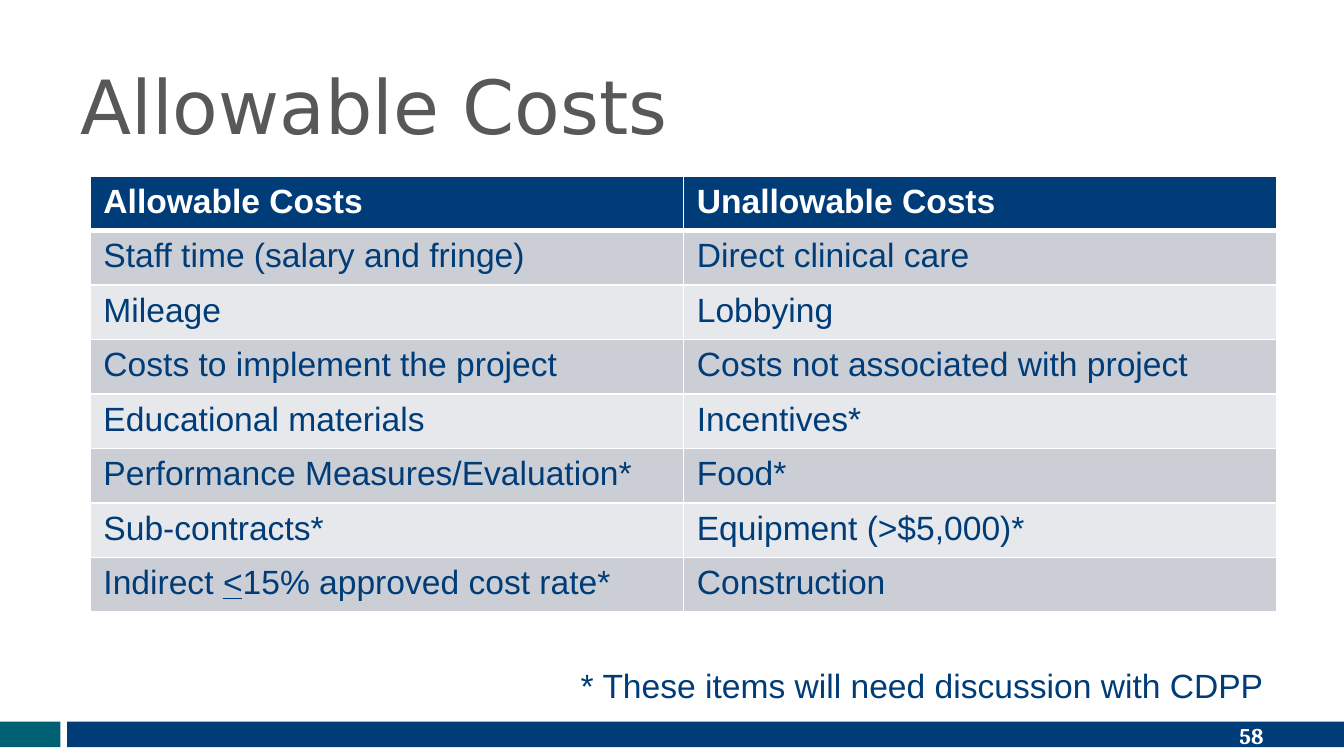
from lxml import etree
from pptx import Presentation
from pptx.dml.color import RGBColor
from pptx.enum.shapes import MSO_SHAPE
from pptx.enum.text import MSO_ANCHOR as ANCHOR, PP_ALIGN as ALIGN
from pptx.oxml.ns import qn
from pptx.util import Inches, Pt

NAVY = RGBColor(0x00, 0x3D, 0x78)
TEAL = RGBColor(0x00, 0x60, 0x73)
GREY = RGBColor(0x58, 0x58, 0x58)
WHITE = RGBColor(0xFF, 0xFF, 0xFF)
BANDS = (RGBColor(0xCC, 0xCE, 0xD6), RGBColor(0xE7, 0xE8, 0xEC))

HEADER = ("Allowable Costs", "Unallowable Costs")
COSTS = (
    ("Staff time (salary and fringe)", "Direct clinical care"),
    ("Mileage", "Lobbying"),
    ("Costs to implement the project", "Costs not associated with project"),
    ("Educational materials", "Incentives*"),
    ("Performance Measures/Evaluation*", "Food*"),
    ("Sub-contracts*", "Equipment (>$5,000)*"),
    ("Indirect _<_15% approved cost rate*", "Construction"),
)


def write_text(tf, text, size=18, font="Arial", color=NAVY, bold=False,
               align=ALIGN.LEFT):
    """Fill the first paragraph; text between underscores is underlined."""
    p = tf.paragraphs[0]
    p.alignment = align
    for i, part in enumerate(text.split("_")):
        r = p.add_run()
        r.text = part
        r.font.size, r.font.name, r.font.bold = Pt(size), font, bold
        r.font.underline = i % 2 == 1
        r.font.color.rgb = color


def add_text(slide, box, text, anchor=ANCHOR.TOP, **fmt):
    tf = slide.shapes.add_textbox(*map(Inches, box)).text_frame
    tf.word_wrap = True
    tf.vertical_anchor = anchor
    write_text(tf, text, **fmt)


def add_bar(slide, box, color):
    sp = slide.shapes.add_shape(MSO_SHAPE.RECTANGLE, *map(Inches, box))
    sp.shadow.inherit = False
    sp.fill.solid()
    sp.fill.fore_color.rgb = color
    sp.line.fill.background()


def set_borders(cell, top, bottom):
    """Draw white borders: 1 pt at the sides, the given widths elsewhere."""
    tc_pr = cell._tc.get_or_add_tcPr()
    widths = {"a:lnL": 1, "a:lnR": 1, "a:lnT": top, "a:lnB": bottom}
    for i, (tag, width) in enumerate(widths.items()):
        ln = etree.Element(qn(tag), w=str(Pt(width)))
        fill = etree.SubElement(ln, qn("a:solidFill"))
        etree.SubElement(fill, qn("a:srgbClr"), val=str(WHITE))
        tc_pr.insert(i, ln)


def add_cost_table(slide, box):
    rows = (HEADER, *COSTS)
    table = slide.shapes.add_table(len(rows), len(HEADER),
                                   *map(Inches, box)).table
    for row in table.rows:
        row.height = Pt(29.2)
    table.rows[len(rows) - 1].height = Inches(0.33)
    for i, row in enumerate(rows):
        is_header = i == 0
        for j, text in enumerate(row):
            cell = table.cell(i, j)
            cell.fill.solid()
            cell.fill.fore_color.rgb = NAVY if is_header else BANDS[(i - 1) % 2]
            set_borders(cell, top=3 if i == 1 else 1,
                        bottom=3 if is_header else 1)
            write_text(cell.text_frame, text, bold=is_header,
                       color=WHITE if is_header else NAVY)


def add_footer(slide, box, number):
    left, top, width, height = box
    accent, gap = 0.45, 0.05
    start = accent + gap
    add_bar(slide, (left, top, accent, height), TEAL)
    add_bar(slide, (left + start, top, width - start, height), NAVY)
    add_text(slide, (left + 7.17, top - 0.05, 2.33, 0.3), number,
             anchor=ANCHOR.MIDDLE, size=12, font="Cambria", color=WHITE,
             bold=True, align=ALIGN.RIGHT)


def main():
    prs = Presentation()
    prs.slide_width = Inches(10)
    prs.slide_height = prs.slide_width * 9 // 16
    slide = prs.slides.add_slide(prs.slide_layouts[6])
    add_footer(slide, (0, 5.37, 10, 0.19), "58")
    add_text(slide, (0.5, 0.15, 9, 1.25), "Allowable Costs",
             anchor=ANCHOR.MIDDLE, size=40, font="DejaVu Sans", color=GREY)
    add_cost_table(slide, (0.67, 1.31, 8.83, 3.24))
    add_text(slide, (0.67, 4.9, 8.83, 0.4),
             "* These items will need discussion with CDPP", align=ALIGN.RIGHT)
    prs.save("out.pptx")


if __name__ == "__main__":
    main()
